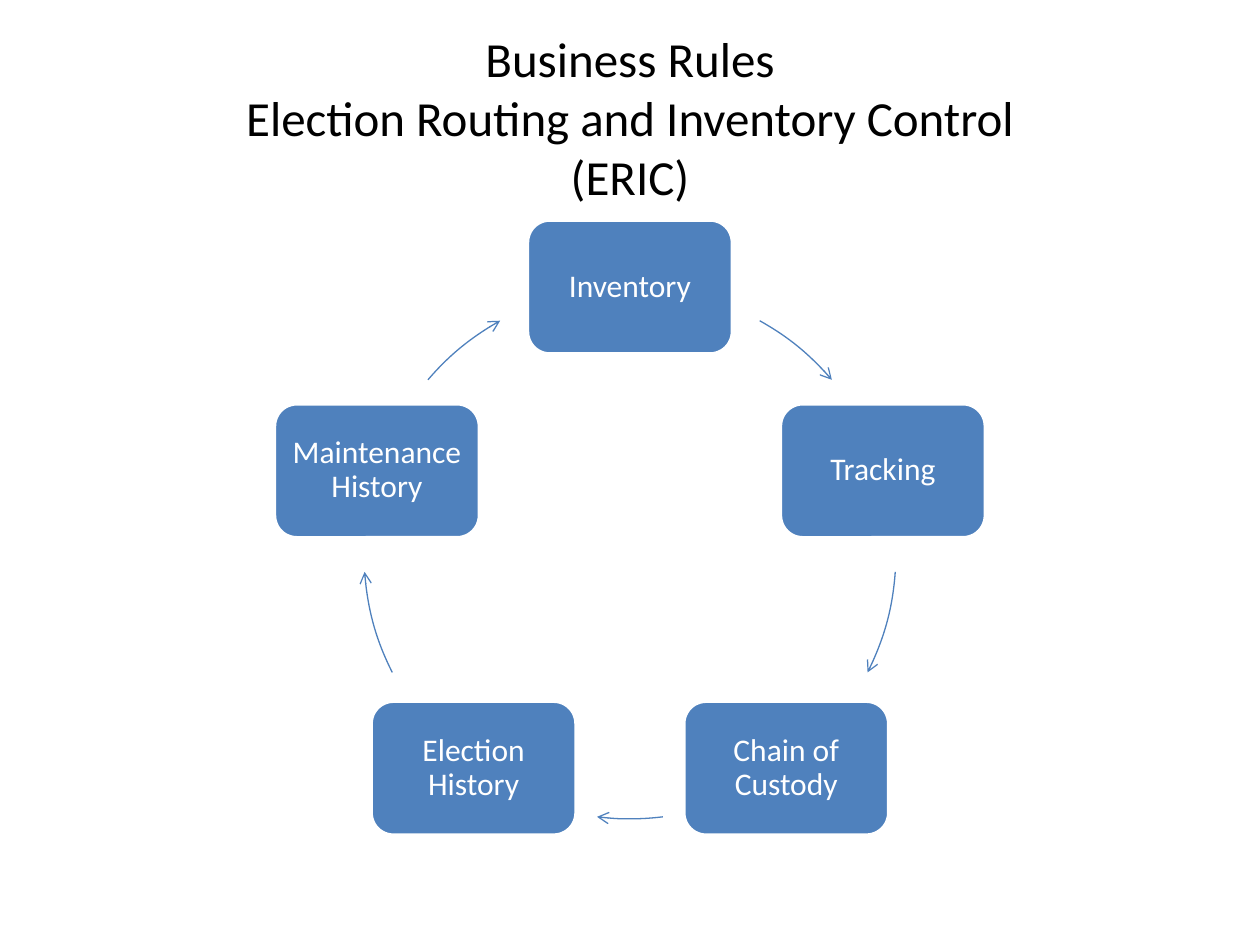
from math import cos, sin, radians
from pptx import Presentation
from pptx.dml.color import RGBColor
from pptx.enum.shapes import MSO_SHAPE
from pptx.enum.text import MSO_ANCHOR, MSO_AUTO_SIZE, PP_ALIGN
from pptx.oxml.ns import qn
from pptx.util import Pt
from lxml.etree import SubElement

# Content, clockwise from the top; \v breaks a line
TITLE = "Business Rules\vElection Routing and Inventory Control\v(ERIC)"
STEPS = ["Inventory", "Tracking", "Chain of Custody",
         "Election History", "Maintenance History"]
# Start and end of each arrow, in degrees clockwise from east
ARCS = [(299.2, 319.4), (4.1, 26.7), (82.9, 97.1), (153.3, 175.9), (220.6, 240.8)]

THEME = {
    "font": "Calibri",
    "ink": RGBColor(0, 0, 0),
    "blue": RGBColor(0x4F, 0x81, 0xBD),
    "white": RGBColor(0xFF, 0xFF, 0xFF),
    "title": 28,
    "step": 18,
}

# Layout in px
SCALE = 914400 // 126
WIDE, HIGH = 1260, 945
MID_X, MID_Y, RADIUS = 630, 553, 266
BOX_W, BOX_H = 205, 134


def px(*vals):
    return [round(v * SCALE) for v in vals]


def write(shape, text, size, color, inset, space=1.0):
    frame = shape.text_frame
    frame.word_wrap = True
    frame.auto_size = MSO_AUTO_SIZE.NONE
    frame.vertical_anchor = MSO_ANCHOR.MIDDLE
    frame.margin_left = frame.margin_right = inset * SCALE
    frame.margin_top = frame.margin_bottom = inset * SCALE
    para = frame.paragraphs[0]
    para.text = text
    para.alignment = PP_ALIGN.CENTER
    para.line_spacing = space
    for run in para.runs:
        run.font.name = THEME["font"]
        run.font.size = Pt(size)
        run.font.color.rgb = color
    # Line breaks take the same size as the words
    for brk in para._p.findall(qn("a:br")):
        SubElement(brk, qn("a:rPr"), sz=str(size * 100))


def add_step(slide, text, angle):
    x = MID_X + RADIUS * cos(radians(angle)) - BOX_W / 2
    y = MID_Y + RADIUS * sin(radians(angle)) - BOX_H / 2
    box = slide.shapes.add_shape(MSO_SHAPE.ROUNDED_RECTANGLE, *px(x, y, BOX_W, BOX_H))
    box.shadow.inherit = False
    box.fill.solid()
    box.fill.fore_color.rgb = THEME["blue"]
    box.line.color.rgb = THEME["white"]
    box.line.width = Pt(2)
    write(box, text, THEME["step"], THEME["white"], inset=4, space=0.9)


def add_arc(slide, start, end):
    arc = slide.shapes.add_shape(
        MSO_SHAPE.ARC, *px(MID_X - RADIUS, MID_Y - RADIUS, 2 * RADIUS, 2 * RADIUS))
    arc.shadow.inherit = False
    arc.fill.background()
    # Angles are kept in 60000ths of a degree, adjustments in 100000ths
    arc.adjustments[0] = start * 0.6
    arc.adjustments[1] = end * 0.6
    arc.line.color.rgb = THEME["blue"]
    arc.line.width = Pt(0.75)
    SubElement(arc.line._get_or_add_ln(), qn("a:tailEnd"), type="arrow")


def main():
    deck = Presentation()
    deck.slide_width, deck.slide_height = px(WIDE, HIGH)
    slide = deck.slides.add_slide(deck.slide_layouts[5])

    # Title
    title = slide.shapes.title
    title.left, title.top, title.width, title.height = px(63, 38, 1134, 158)
    write(title, TITLE, THEME["title"], THEME["ink"], inset=6)

    # Cycle of steps, each with the arrow to the next
    turn = 360 / len(STEPS)
    for i, (text, arc) in enumerate(zip(STEPS, ARCS)):
        add_step(slide, text, turn * i - 90)
        add_arc(slide, *arc)

    deck.save("out.pptx")


if __name__ == "__main__":
    main()
